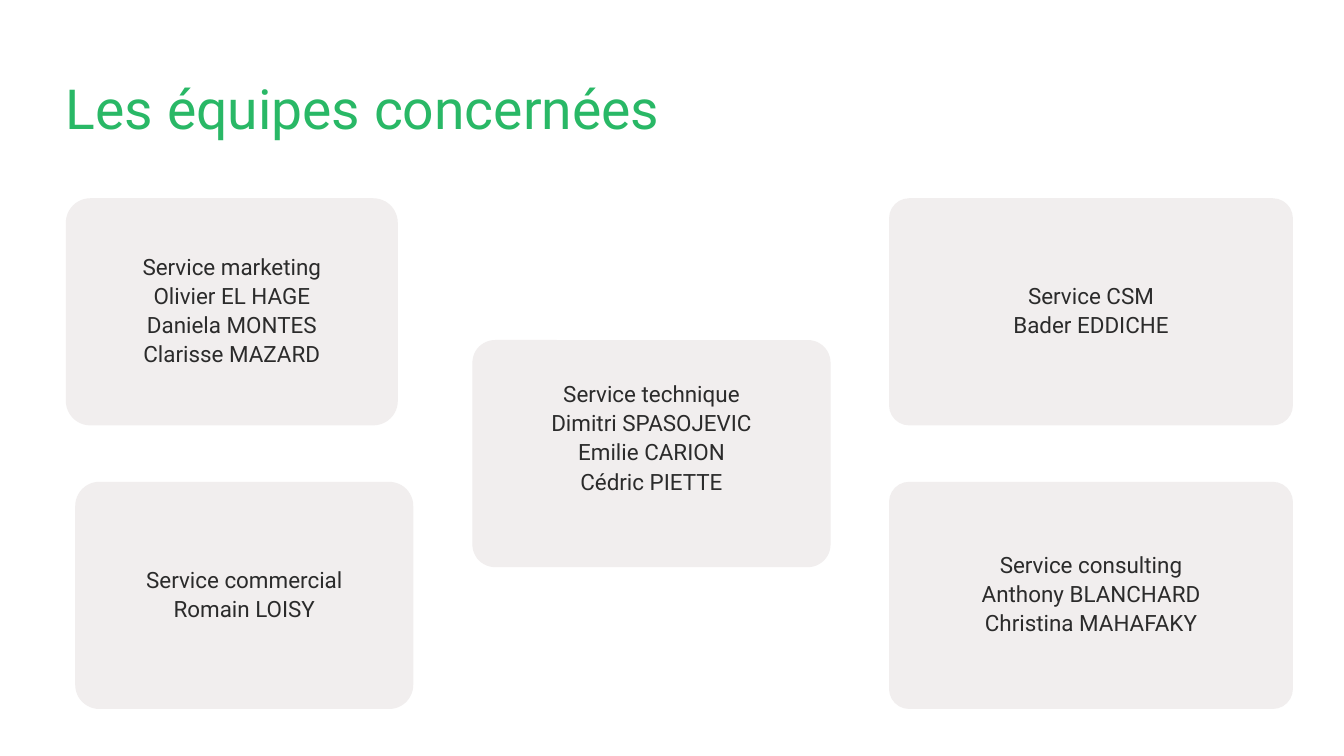
from pptx import Presentation
from pptx.dml.color import RGBColor
from pptx.enum.shapes import MSO_SHAPE as SHAPE
from pptx.enum.text import MSO_ANCHOR as ANCHOR, PP_ALIGN as ALIGN
from pptx.util import Inches, Pt

GREEN = RGBColor(0x29, 0xB8, 0x66)
INK = RGBColor(0x2B, 0x2B, 0x2B)
CARD = RGBColor(0xF1, 0xEE, 0xEE)

FONT = "Roboto"
LINE = 31.2
PAD = 0.06
CARD_HEIGHT = 3.38
TEXT_RISE = 0.08
CORNER = 1.8
TOP, ROW_STEP = 2.95, 2.11

TEAMS = [
    (0.98, 0, 4.94, 0, ["Service marketing", "Olivier EL HAGE", "Daniela MONTES", "Clarisse MAZARD"]),
    (1.12, 2, 5.03, 0, ["Service commercial", "Romain LOISY"]),
    (7.03, 1, 5.33, 1, ["Service technique", "Dimitri SPASOJEVIC", "Emilie CARION", "Cédric PIETTE"]),
    (13.23, 0, 6.01, 0, ["Service CSM", "Bader EDDICHE"]),
    (13.23, 2, 6.01, 0, ["Service consulting", "Anthony BLANCHARD", "Christina MAHAFAKY"]),
]


def write(tf, lines, *, size, color, spacing, align=ALIGN.LEFT):
    for i, line in enumerate(lines):
        p = tf.paragraphs[0] if i == 0 else tf.add_paragraph()
        p.alignment = align
        p.line_spacing = Pt(spacing)
        r = p.add_run()
        r.text = line
        r.font.name = FONT
        r.font.size = Pt(size)
        r.font.color.rgb = color


class Deck:
    def __init__(self, slide):
        self.slide = slide

    def textbox(self, left, top, width, height, lines, *, inset=0, bottom=0,
                anchor=ANCHOR.TOP, **style):
        box = (Inches(v) for v in (left, top, width, height))
        tf = self.slide.shapes.add_textbox(*box).text_frame
        tf.word_wrap = True
        tf.vertical_anchor = anchor
        tf.margin_left = tf.margin_right = tf.margin_top = Inches(inset)
        tf.margin_bottom = Inches(inset + bottom)
        write(tf, lines, **style)

    def panel(self, left, top, width, height):
        box = (Inches(v) for v in (left, top, width, height))
        sp = self.slide.shapes.add_shape(SHAPE.ROUNDED_RECTANGLE, *box)
        sp.adjustments[0] = CORNER / width / height
        sp.shadow.inherit = False
        sp.fill.solid()
        sp.fill.fore_color.rgb = CARD
        sp.line.fill.background()

    def team(self, left, row, width, spare_lines, lines):
        top = TOP + row * ROW_STEP
        self.panel(left, top, width, CARD_HEIGHT)
        self.textbox(left, top - TEXT_RISE, width, CARD_HEIGHT + TEXT_RISE, lines,
                     inset=PAD, bottom=spare_lines * LINE / 72, anchor=ANCHOR.MIDDLE,
                     size=24, color=INK, spacing=LINE, align=ALIGN.CENTER)


def main():
    prs = Presentation()
    prs.slide_width = Inches(20)
    prs.slide_height = Inches(11.25)
    deck = Deck(prs.slides.add_slide(prs.slide_layouts[6]))
    for team in TEAMS:
        deck.team(*team)
    deck.textbox(0.98, 1.19, 14.48, 0.92, ["Les équipes concernées"],
                 size=59.2, color=GREEN, spacing=65.2)
    prs.save("out.pptx")


if __name__ == "__main__":
    main()
